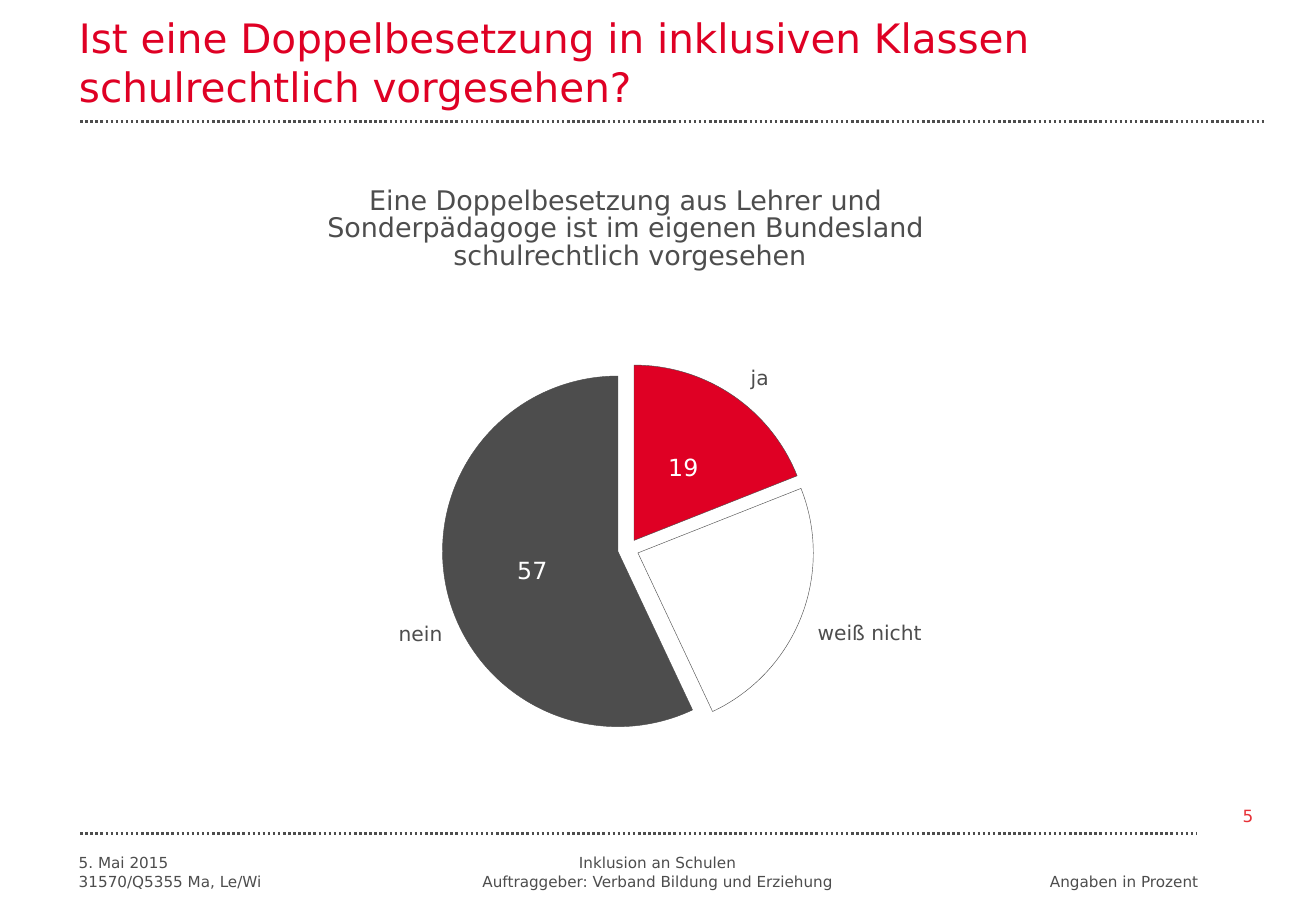
from lxml import etree
from pptx import Presentation
from pptx import util as u
from pptx.chart.data import CategoryChartData
from pptx.dml.color import RGBColor
from pptx.enum import chart as ch, dml, shapes, text
from pptx.oxml import parse_xml
from pptx.oxml.ns import nsdecls, qn

PX = 9144  # 100 px to the inch
FONT = "DejaVu Sans"
HEX = {"red": "DF0024", "page": "E73137", "gray": "4D4D4D", "white": "FFFFFF"}
COLOR = {name: RGBColor.from_string(code) for name, code in HEX.items()}
LEFT, MID, RIGHT = text.PP_ALIGN.LEFT, text.PP_ALIGN.CENTER, text.PP_ALIGN.RIGHT


def style(font, size, color):
    font.name, font.size, font.bold = FONT, u.Pt(size), False
    font.color.rgb = COLOR[color]


def write(shape, words, size, color, align, space=None):
    frame = shape.text_frame
    frame.text = words
    frame.word_wrap = False
    frame.auto_size = text.MSO_AUTO_SIZE.NONE
    for par in frame.paragraphs:
        par.alignment = align
        par.line_spacing = space
        style(par.font, size, color)
    return frame


prs = Presentation()
prs.slide_width, prs.slide_height = 1083 * PX, 750 * PX
slide = prs.slides.add_slide(prs.slide_layouts[5])

# Dotted rules above and below the content
for right, y in ((1041, 100), (985, 686)):
    rule = slide.shapes.add_connector(
        shapes.MSO_CONNECTOR.STRAIGHT, 66 * PX, y * PX, right * PX, y * PX)
    rule.line.color.rgb = COLOR["gray"]
    rule.line.width = u.Pt(1.5)
    rule.line.dash_style = dml.MSO_LINE.ROUND_DOT
    etree.SubElement(rule._element.spPr, qn("a:effectLst"))

# Title
title = slide.shapes.title
title.left, title.top, title.width, title.height = (n * PX for n in (55, 5, 816, 91))
frame = write(title, "Ist eine Doppelbesetzung in inklusiven Klassen\n"
              "schulrechtlich vorgesehen?", 24, "red", LEFT)
frame.vertical_anchor = text.MSO_ANCHOR.BOTTOM

# Pie chart
data = CategoryChartData()
data.categories = ["1", "2", "3"]
data.add_series("Series 1", (19, 24, 57))
chart = slide.shapes.add_chart(
    ch.XL_CHART_TYPE.PIE, 296 * PX, 266 * PX, 425 * PX, 396 * PX, data).chart
chart.has_legend = chart.has_title = False
style(chart.font, 18, "red")
pie = chart.plots[0]
pie.vary_by_categories = True
series = pie.series[0]
series.data_labels.show_value = False
for i, fill in enumerate(("red", None, "gray")):
    point = series.points[i]
    look = point.format
    look.line.color.rgb = COLOR["gray"]
    look.line.width = u.Pt(0.25)
    if fill is None:
        look.fill.background()
        continue
    look.fill.solid()
    look.fill.fore_color.rgb = COLOR[fill]
    label = point.data_label
    style(label.font, 14, "white")
    label.position = ch.XL_LABEL_POSITION.CENTER

# Exploded slices and fixed plot area
props = series.format.line._get_or_add_ln().getparent()
props.addnext(parse_xml(f'<c:explosion {nsdecls("c")} val="6"/>'))
area = chart._chartSpace.chart.plotArea
for old in area.findall(qn("c:layout")):
    area.remove(old)
sizes = "".join(f'<c:{tag} val="{val}"/>' for tag, val in (
    ("layoutTarget", "inner"), ("xMode", "edge"), ("yMode", "edge"),
    ("x", 0.16), ("y", 0.08), ("w", 0.72), ("h", 0.78)))
area.insert(0, parse_xml(
    f'<c:layout {nsdecls("c")}><c:manualLayout>{sizes}</c:manualLayout></c:layout>'))

# Chart heading, slice names and footer
for box, words, size, align, space in (
    ((253, 150, 531, 79), "Eine Doppelbesetzung aus Lehrer und \n"
     "Sonderpädagoge ist im eigenen Bundesland \n"
     "schulrechtlich vorgesehen", 16, MID, 0.85),
    ((608, 296, 36, 30), "ja", 12, LEFT, None),
    ((318, 510, 56, 27), "nein", 12, RIGHT, 0.85),
    ((663, 506, 106, 30), "weiß nicht", 12, LEFT, None),
    ((55, 698, 176, 40), "5. Mai 2015\n31570/Q5355 Ma, Le/Wi", 9, LEFT, None),
    ((384, 698, 314, 40), "Inklusion an Schulen\n"
     "Auftraggeber: Verband Bildung und Erziehung", 9, MID, None),
    ((853, 713, 144, 25), "Angaben in Prozent", 9, MID, None),
):
    note = slide.shapes.add_textbox(*(n * PX for n in box))
    write(note, words, size, "gray", align, space)

# Page number
page = slide.shapes.add_textbox(1005 * PX, 652 * PX, 44 * PX, 39 * PX)
frame = write(page, "5", 10, "page", MID)
frame.vertical_anchor = text.MSO_ANCHOR.MIDDLE
frame.margin_left = frame.margin_right = frame.margin_top = frame.margin_bottom = 0

prs.save("out.pptx")
